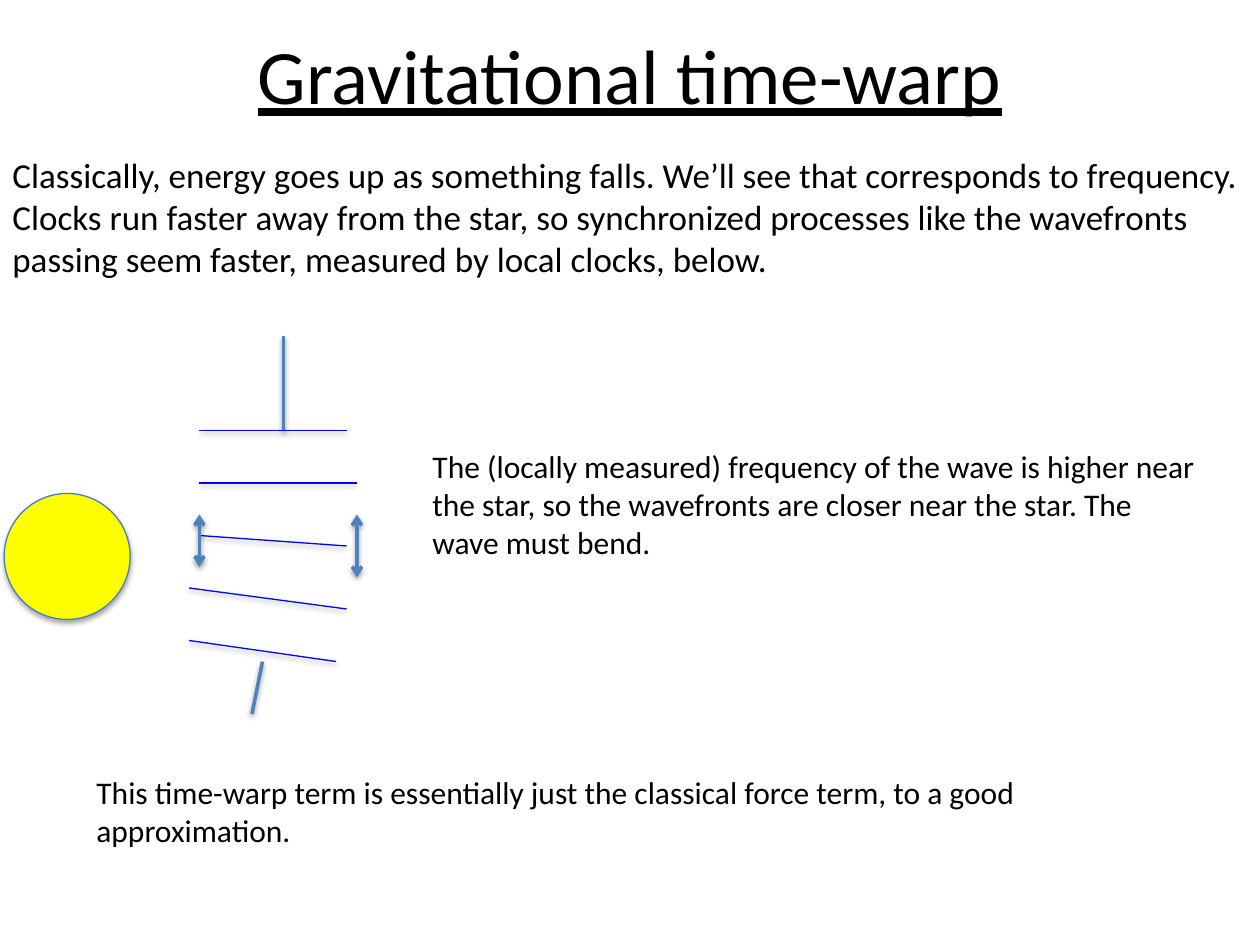
from dataclasses import dataclass

from lxml import etree
from pptx import Presentation
from pptx.dml.color import RGBColor
from pptx.enum import shapes, text
from pptx.oxml import ns
from pptx.util import Inches, Pt

CELL = 1 / 12  # grid of 120 columns by 90 rows


@dataclass(frozen=True)
class Theme:
    font: str = "Calibri"
    ink: str = "000000"
    star: str = "FFFF00"
    star_edge: str = "4B7EBC"
    ray: str = "4F81BD"
    front: str = "0000FF"
    title: int = 44
    body: int = 20
    note: int = 18
    thick: float = 2
    thin: float = 0.75


T = Theme()


def grid(*cells):
    return [Inches(c * CELL) for c in cells]


def rgb(value):
    return RGBColor.from_string(value)


def write(sp, words, size, **formats):
    tf = sp.text_frame
    tf.word_wrap = True
    p = tf.paragraphs[0]
    r = p.add_run()
    r.text = words
    r.font.color.rgb = rgb(T.ink)
    for name, value in {"name": T.font, "size": Pt(size), **formats}.items():
        setattr(r.font, name, value)
    return p


def add_shadow(sp, alpha, distance):
    effects = etree.SubElement(sp._element.spPr, ns.qn("a:effectLst"))
    shadow = etree.SubElement(
        effects, ns.qn("a:outerShdw"), blurRad=str(Pt(3.1)),
        dist=str(Pt(distance)), dir="5400000", rotWithShape="0")
    color = etree.SubElement(shadow, ns.qn("a:srgbClr"), val="000000")
    etree.SubElement(color, ns.qn("a:alpha"), val=str(alpha * 1000))


def add_line(parent, ends, color, width, arrows=False):
    s = parent.add_connector(shapes.MSO_CONNECTOR.STRAIGHT, *grid(*ends))
    s.line.color.rgb = rgb(color)
    s.line.width = Pt(width)
    if arrows:
        for end in ("a:headEnd", "a:tailEnd"):
            etree.SubElement(s.line._get_or_add_ln(), ns.qn(end), type="arrow")
    add_shadow(s, 38, 1.6)


def add_title(slide, box, words):
    sp = slide.shapes.title
    for name, value in zip(("left", "top", "width", "height"), grid(*box)):
        setattr(sp, name, value)
    sp.text_frame.vertical_anchor = text.MSO_ANCHOR.MIDDLE
    write(sp, words, T.title, underline=True).alignment = text.PP_ALIGN.CENTER


def add_text(slide, box, words, size, before=0):
    sp = slide.shapes.add_textbox(*grid(*box))
    write(sp, words, size).space_before = Pt(before)


def add_bending_wave(slide, box):
    x, y, w, h = box

    def ends(x1, y1, x2, y2):
        return x + x1, y + y1, x + x2, y + y2

    group = slide.shapes.add_group_shape().shapes

    # Star, centred on the lower part of the wave
    star = group.add_shape(shapes.MSO_SHAPE.OVAL, *grid(x, y + 15, 12, 12))
    star.fill.solid()
    star.fill.fore_color.rgb = rgb(T.star)
    star.line.color.rgb = rgb(T.star_edge)
    star.line.width = Pt(T.thin)
    add_shadow(star, 35, 1.8)

    # Incoming and outgoing ray
    for ray in ((26.6, 0, 26.6, 9), (24.6, h - 5, 23.6, h)):
        add_line(group, ends(*ray), T.ray, T.thick)

    # Wavefronts: five rows apart at the star side, tilting more further down
    fronts = ((18.6, 32.6, 0), (18.6, w, 0), (18.6, 32.6, 1),
              (17.6, 32.6, 2), (17.6, 31.6, 2))
    for i, (near, far, drop) in enumerate(fronts):
        row = 9 + 5 * i
        add_line(group, ends(near, row, far, row + drop), T.front, T.thin)

    # Spacing between wavefronts, near and far from the star
    for column, length in ((18.6, 5), (w, 6)):
        add_line(slide.shapes, ends(column, 17, column, 17 + length),
                 T.ray, T.thick, arrows=True)


def main():
    prs = Presentation()
    prs.slide_width, prs.slide_height = grid(120, 90)
    slide = prs.slides.add_slide(prs.slide_layouts.get_by_name("Title Only"))

    add_title(slide, (6, 0, 108, 14), "Gravitational time-warp")
    add_text(slide, (0, 14, 119.8, 14),
             "Classically, energy goes up as something falls. We’ll see that "
             "corresponds to frequency. Clocks run faster away from the star, "
             "so synchronized processes like the wavefronts passing seem "
             "faster, measured by local clocks, below.", T.body, before=4)
    add_text(slide, (40, 42, 76, 12.1),
             "The (locally measured) frequency of the wave is higher near the "
             "star, so the wavefronts are closer near the star. The wave must "
             "bend.", T.note)
    add_text(slide, (8, 73, 92, 8.5),
             "This time-warp term is essentially just the classical force "
             "term, to a good approximation.", T.note)
    add_bending_wave(slide, (0.4, 32, 33.6, 36))

    prs.save("out.pptx")


if __name__ == "__main__":
    main()
